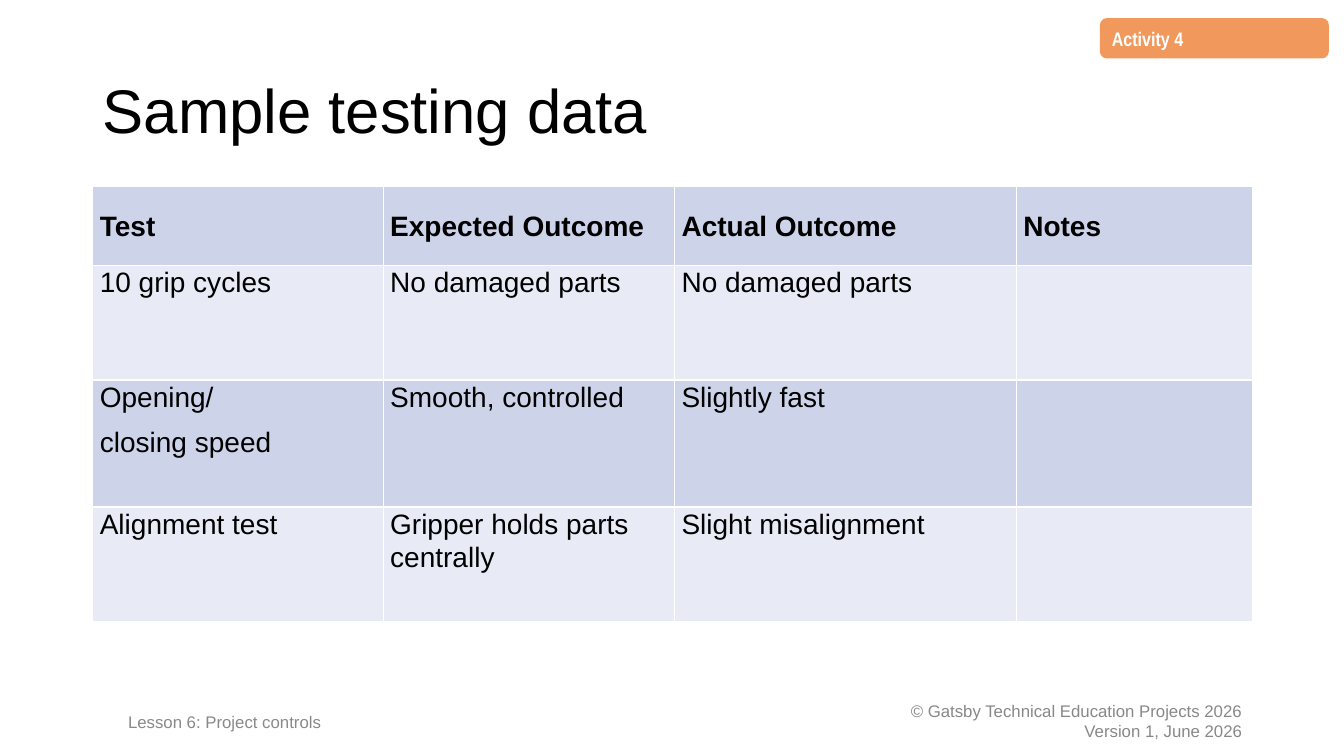
from lxml.etree import SubElement
from pptx import Presentation
from pptx.dml.color import RGBColor
from pptx.enum.shapes import MSO_SHAPE
from pptx.enum.text import MSO_ANCHOR, PP_ALIGN
from pptx.oxml.ns import qn
from pptx.util import Inches, Pt

COLORS = {"ink": "000000", "white": "FFFFFF", "dark": "CDD4EA", "light": "E8EBF5",
          "orange": "F1995D", "lesson": "898989", "rights": "888888"}


def write(frame, text, size, color, bold=False, face="Arial", space=1.0,
          align=PP_ALIGN.LEFT, gap=0):
    """Fill a text frame, one paragraph per line of text."""
    frame.word_wrap = True
    frame.text = text
    for i, para in enumerate(frame.paragraphs):
        para.alignment = align
        para.line_spacing = space
        para.space_before = Pt(gap if i else 0)
        font = para.font
        font.name, font.size, font.bold = face, Pt(size), bold
        font.color.rgb = RGBColor.from_string(COLORS[color])


def edge(cell):
    """Draw thin white borders round a cell."""
    props = cell._tc.get_or_add_tcPr()
    for i, side in enumerate(("a:lnL", "a:lnR", "a:lnT", "a:lnB")):
        line = props.makeelement(qn(side), {"w": str(Pt(1))})
        props.insert(i, line)
        fill = SubElement(line, qn("a:solidFill"))
        SubElement(fill, qn("a:srgbClr"), val=COLORS["white"])


prs = Presentation()
prs.slide_width, prs.slide_height = Inches(13.33), Inches(7.5)
slide = prs.slides.add_slide(prs.slide_layouts[5])
shapes = slide.shapes

# Title
title = shapes.title
title.left, title.top = Inches(0.92), Inches(0.4)
title.width, title.height = Inches(11.5), Inches(1.45)
title.text_frame.vertical_anchor = MSO_ANCHOR.MIDDLE
write(title.text_frame, "Sample testing data", 44, "ink", space=0.9)

# Test results
rows = [
    ("Test", "Expected Outcome", "Actual Outcome", "Notes"),
    ("10 grip cycles", "No damaged parts", "No damaged parts", ""),
    ("Opening/\nclosing speed", "Smooth, controlled", "Slightly fast", ""),
    ("Alignment test", "Gripper holds parts centrally", "Slight misalignment", ""),
]
widths = [2.88, 2.89, 3.39, 2.34]
heights = [0.78, 1.14, 1.26, 1.14]
table = shapes.add_table(len(rows), len(widths), Inches(0.92), Inches(1.85),
                         Inches(sum(widths)), Inches(sum(heights))).table
for col, width in zip(table.columns, widths):
    col.width = Inches(width)
for r, (row, height) in enumerate(zip(rows, heights)):
    table.rows[r].height = Inches(height)
    for c, text in enumerate(row):
        cell = table.cell(r, c)
        cell.margin_left = cell.margin_right = Inches(0.07)
        cell.margin_top = cell.margin_bottom = 0
        cell.vertical_anchor = MSO_ANCHOR.TOP if r else MSO_ANCHOR.MIDDLE
        cell.fill.solid()
        cell.fill.fore_color.rgb = RGBColor.from_string(COLORS["light" if r % 2 else "dark"])
        edge(cell)
        write(cell.text_frame, text, 20, "ink", bold=r == 0, space=1.07, gap=8)

# Activity tag
tag = shapes.add_shape(MSO_SHAPE.FLOWCHART_ALTERNATE_PROCESS, Inches(10.91), Inches(0.18),
                       Inches(2.27), Inches(0.4))
tag.shadow.inherit = False
tag.fill.solid()
tag.fill.fore_color.rgb = RGBColor.from_string(COLORS["orange"])
tag.line.fill.background()
tag.text_frame.vertical_anchor = MSO_ANCHOR.TOP
write(tag.text_frame, "Activity 4", 14, "white", bold=True, face="Arial Narrow", space=1.08)

# Footer
notes = [
    (0.92, 4.6, 0.35, "Lesson 6: Project controls", "lesson", 1.08, PP_ALIGN.LEFT),
    (7.92, 4.5, 0.1, "© Gatsby Technical Education Projects 2026\nVersion 1, June 2026",
     "rights", 1.0, PP_ALIGN.RIGHT),
]
for left, width, inset, text, color, space, align in notes:
    box = shapes.add_textbox(Inches(left), Inches(6.95), Inches(width), Inches(0.4))
    box.text_frame.margin_left = Inches(inset)
    box.text_frame.vertical_anchor = MSO_ANCHOR.MIDDLE
    write(box.text_frame, text, 12, color, space=space, align=align)

prs.save("out.pptx")
